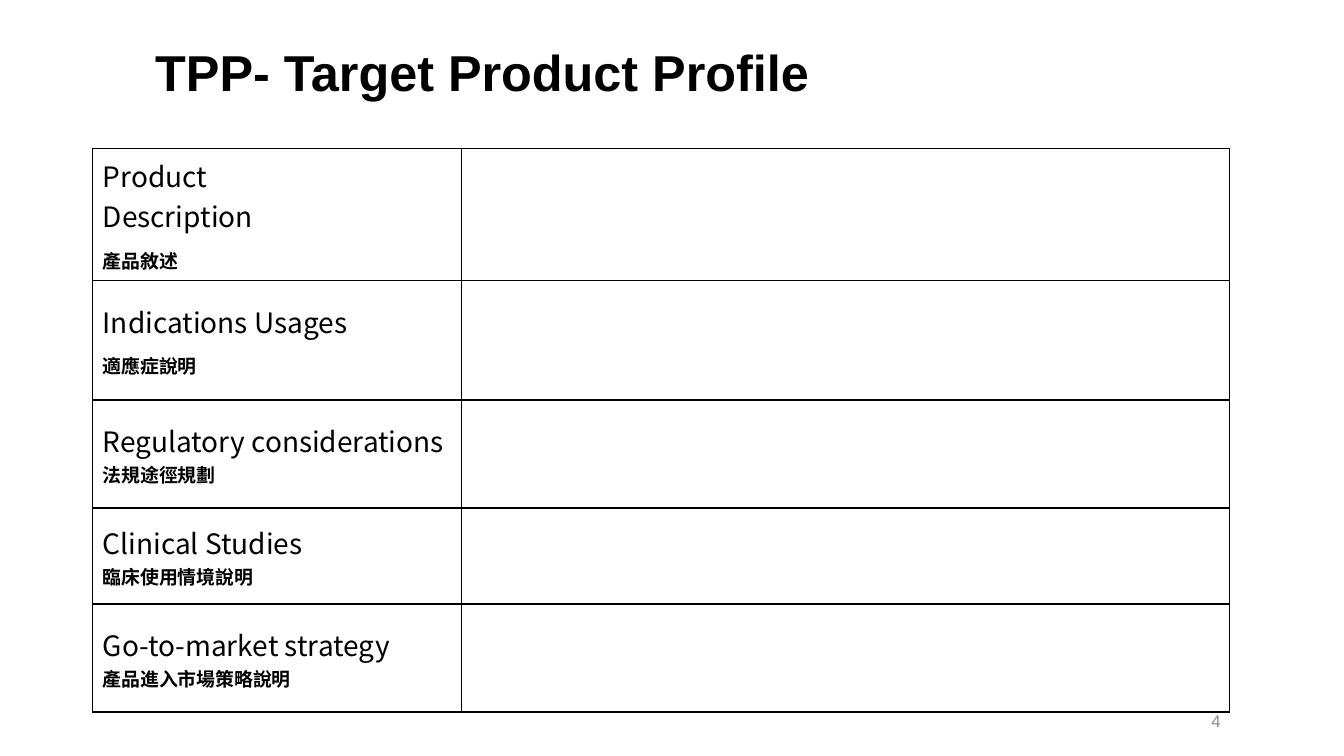
from dataclasses import dataclass

from lxml import etree
from pptx import Presentation
from pptx.dml.color import RGBColor
from pptx.enum.text import MSO_ANCHOR, PP_ALIGN
from pptx.oxml.ns import qn
from pptx.util import Pt

LEFT, RIGHT = PP_ALIGN.LEFT, PP_ALIGN.RIGHT
MIDDLE = MSO_ANCHOR.MIDDLE
TITLE_ONLY = 5


@dataclass(frozen=True)
class Theme:
    ink: str = "000000"
    muted: str = "8C8C8C"
    paper: str = "FFFFFF"
    font: str = "Arial"
    table_font: str = "Noto Sans CJK SC"
    title: float = 36
    label: float = 20
    sublabel: float = 13.5
    page: float = 12
    border: float = 1


THEME = Theme()

# English lines, Chinese line, gap between them, row height
PROFILE_ROWS = [
    (["Product", "Description"], "產品敘述", 7.5, 94.3),
    (["Indications Usages"], "適應症說明", 7.5, 85.7),
    (["Regulatory considerations"], "法規途徑規劃", 0, 77.1),
    (["Clinical Studies"], "臨床使用情境說明", 0, 68.6),
    (["Go-to-market strategy"], "產品進入市場策略說明", 0, 77.1),
]
COLUMN_WIDTHS = [263.5, 548.7]


def write(p, text, *, size, font=THEME.font, color=THEME.ink, bold=False,
          align=LEFT, before=0, spacing=1.0):
    """Add formatted text to a paragraph."""
    p.alignment = align
    p.space_before = Pt(before)
    p.line_spacing = spacing
    r = p.add_run()
    r.text = text
    r.font.size = Pt(size)
    r.font.name = font
    r.font.bold = bold
    r.font.color.rgb = RGBColor.from_string(color)
    etree.SubElement(r.font._element, qn("a:ea"), typeface=font)


def format_cell(cell):
    """Give a cell a plain fill and a thin border on every side."""
    cell.vertical_anchor = MIDDLE
    tc_pr = cell._tc.get_or_add_tcPr()
    for side in ("a:lnL", "a:lnR", "a:lnT", "a:lnB"):
        ln = etree.SubElement(tc_pr, qn(side), w=str(Pt(THEME.border)))
        fill = etree.SubElement(ln, qn("a:solidFill"))
        etree.SubElement(fill, qn("a:srgbClr"), val=THEME.ink)
    cell.fill.solid()
    cell.fill.fore_color.rgb = RGBColor.from_string(THEME.paper)


def add_title(slide, x, y, w, h):
    sp = slide.shapes.title
    sp.left, sp.top, sp.width, sp.height = Pt(x), Pt(y), Pt(w), Pt(h)
    tf = sp.text_frame
    tf.word_wrap = True
    tf.vertical_anchor = MIDDLE
    write(tf.paragraphs[0], "TPP- Target Product Profile",
          size=THEME.title, bold=True, spacing=0.9)


def add_profile_table(slide, x, y):
    heights = [row[-1] for row in PROFILE_ROWS]
    frame = slide.shapes.add_table(len(PROFILE_ROWS), len(COLUMN_WIDTHS), Pt(x), Pt(y),
                                   Pt(sum(COLUMN_WIDTHS)), Pt(sum(heights)))
    table = frame.table
    table.first_row = table.horz_banding = False
    for column, width in zip(table.columns, COLUMN_WIDTHS):
        column.width = Pt(width)
    for row, (english, chinese, gap, height) in zip(table.rows, PROFILE_ROWS):
        row.height = Pt(height)
        for cell in row.cells:
            format_cell(cell)
        tf = row.cells[0].text_frame
        for i, line in enumerate(english):
            p = tf.add_paragraph() if i else tf.paragraphs[0]
            write(p, line, size=THEME.label, font=THEME.table_font)
        write(tf.add_paragraph(), chinese, size=THEME.sublabel,
              font=THEME.table_font, bold=True, before=gap)


def add_page_number(slide, x, y, w, h):
    tf = slide.shapes.add_textbox(Pt(x), Pt(y), Pt(w), Pt(h)).text_frame
    tf.word_wrap = True
    tf.vertical_anchor = MIDDLE
    write(tf.paragraphs[0], "4", size=THEME.page, color=THEME.muted, align=RIGHT)


def build_profile_slide(prs):
    slide = prs.slides.add_slide(prs.slide_layouts[TITLE_ONLY])
    # Heading
    add_title(slide, 103.7, 1.4, 790.6, 104.4)
    # Page number, behind the table
    add_page_number(slide, 678.2, 500.4, 200.9, 28.8)
    # Profile table
    add_profile_table(slide, 66.2, 105.8)


def main():
    prs = Presentation()
    prs.slide_width, prs.slide_height = Pt(960), Pt(540)
    build_profile_slide(prs)
    prs.save("out.pptx")


if __name__ == "__main__":
    main()
